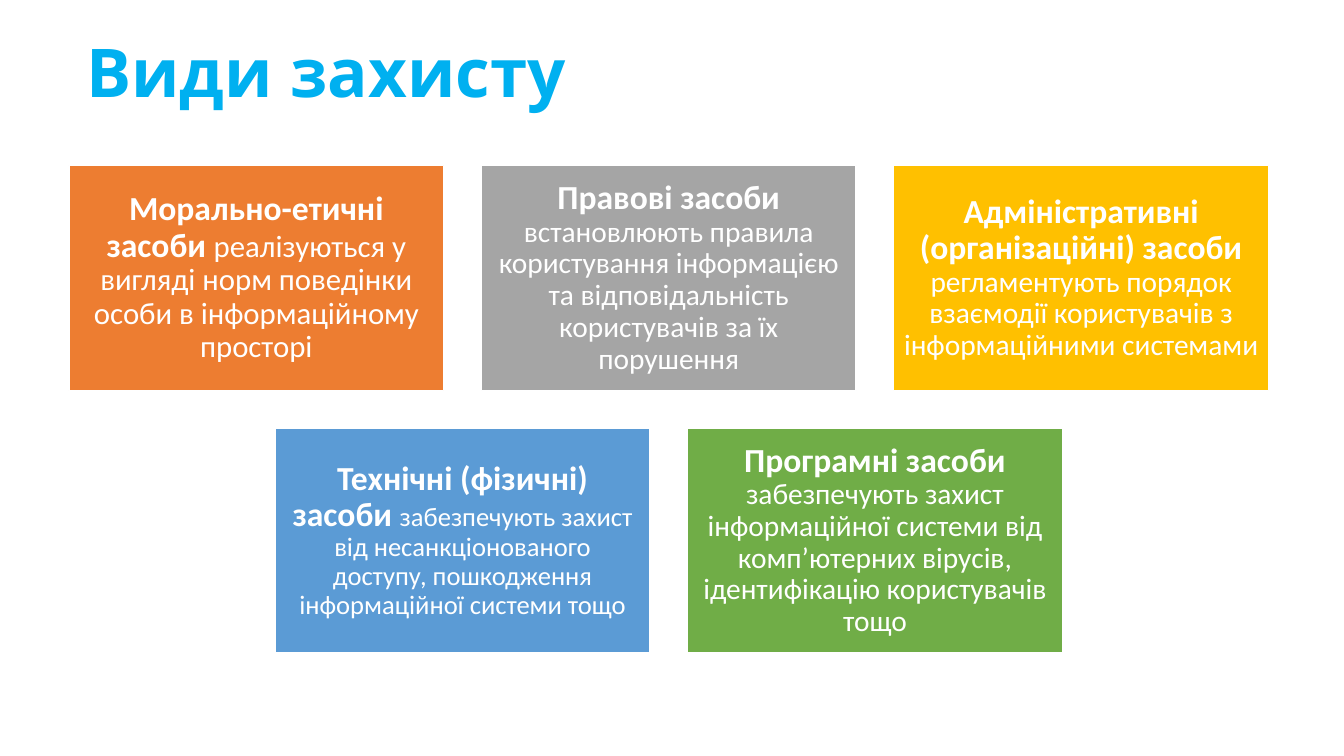
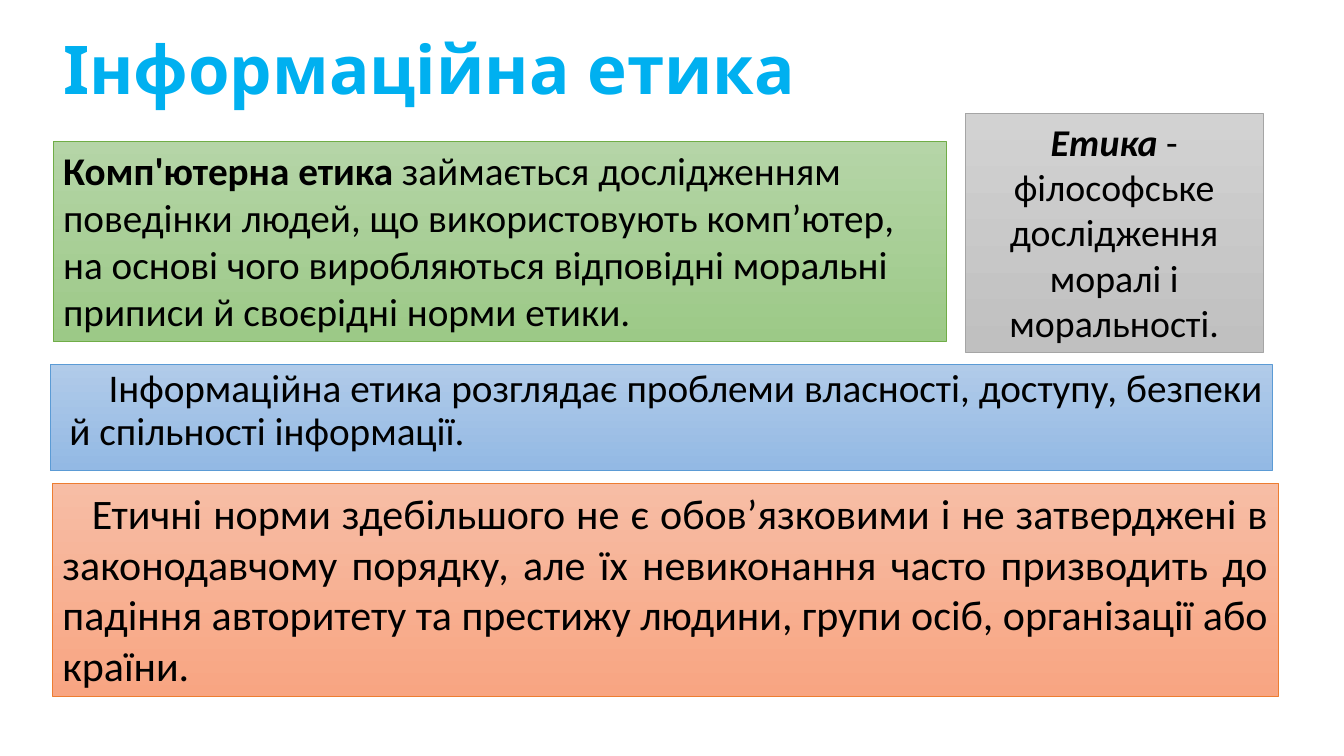
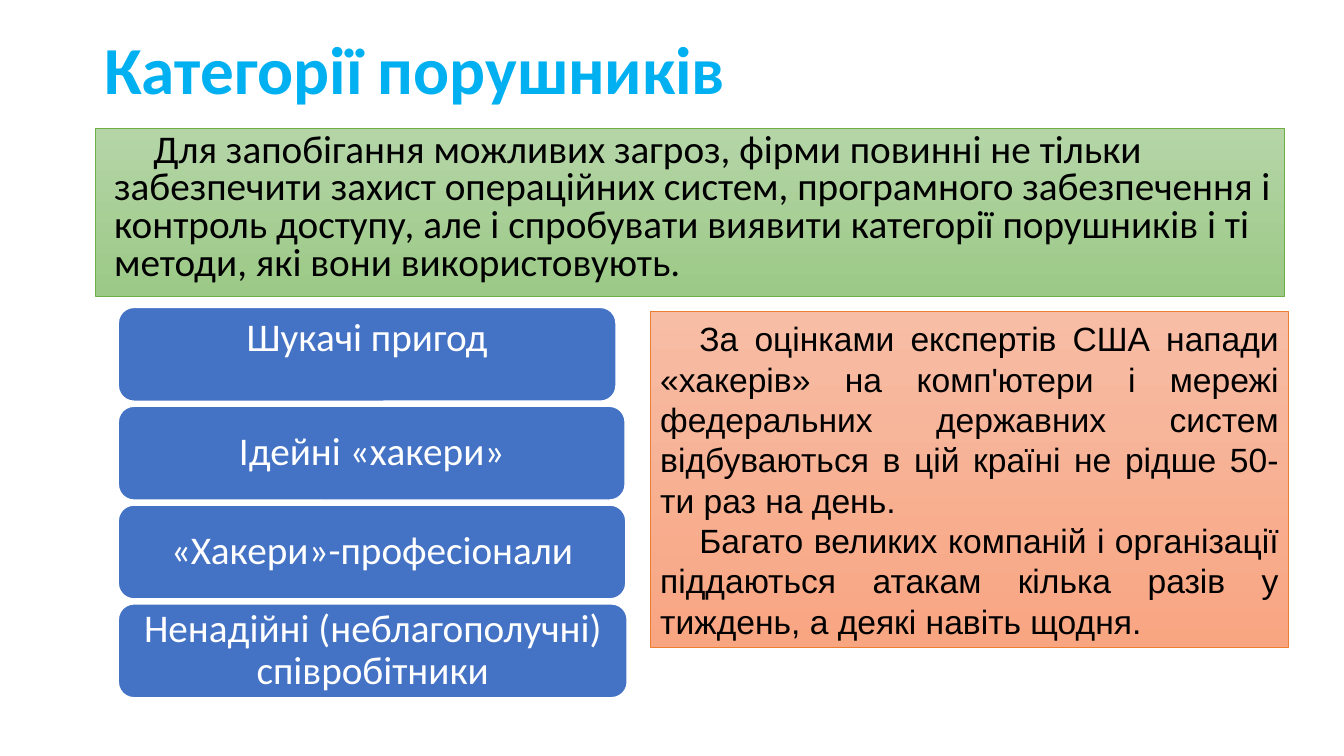
from dataclasses import dataclass

from pptx import Presentation
from pptx import util as u
from pptx.dml.color import RGBColor
from pptx.enum import shapes, text

Pt = u.Pt
SHAPE = shapes.MSO_SHAPE
ALIGN = text.PP_ALIGN
ANCHOR = text.MSO_ANCHOR

COLORS = {
    "title": "00B0F0", "white": "FFFFFF", "black": "000000",
    "orange": "ED7D31", "gray": "A5A5A5", "gold": "FFC000",
    "blue": "5B9BD5", "green": "70AD47", "bar": "4472C4",
}
GRADIENTS = {
    "orange": ("F7BDA5", "F8A582"),
    "gray": ("D2D2D2", "C0C0C0"),
    "blue": ("B1CBE9", "93B9E4"),
    "green": ("B5D5A7", "9CC987"),
}


@dataclass
class Run:
    text: str
    bold: bool = False
    italic: bool = False
    size: float | None = None


@dataclass
class Box:
    left: float
    top: float
    width: float
    height: float


@dataclass
class Tile:
    color: str
    term: str
    detail: str
    detail_size: float


@dataclass
class Bar:
    label: str
    width: float
    anchor: ANCHOR = ANCHOR.MIDDLE


def rgb(name: str) -> RGBColor:
    return RGBColor.from_string(COLORS[name])


def write(tf, *paragraphs: list[Run], size: float, font: str = "Calibri",
          color: str = "black", align: ALIGN = ALIGN.LEFT,
          anchor: ANCHOR = ANCHOR.TOP, spacing: float = 1.0,
          margin: float = 0, indent: float = 0,
          inset: tuple[float, float] = (7.2, 3.6)) -> None:
    """Fill a text frame; each paragraph is a list of runs."""
    tf.word_wrap = True
    tf.vertical_anchor = anchor
    tf.margin_left = tf.margin_right = Pt(inset[0])
    tf.margin_top = tf.margin_bottom = Pt(inset[1])
    for i, runs in enumerate(paragraphs):
        p = tf.add_paragraph() if i else tf.paragraphs[0]
        p.alignment = align
        p.line_spacing = spacing
        pPr = p._p.get_or_add_pPr()
        pPr.set("marL", str(Pt(margin)))
        pPr.set("indent", str(Pt(indent)))
        for run in runs:
            r = p.add_run()
            r.text = run.text
            r.font.name = font
            r.font.size = Pt(run.size or size)
            r.font.bold = run.bold
            r.font.italic = run.italic
            r.font.color.rgb = rgb(color)


def place(box: Box) -> tuple[u.Length, ...]:
    return Pt(box.left), Pt(box.top), Pt(box.width), Pt(box.height)


def add_block(s, box: Box, color: str, kind: SHAPE = SHAPE.RECTANGLE):
    """Solid shape with a thin white outline."""
    sp = s.shapes.add_shape(kind, *place(box))
    sp.shadow.inherit = False
    sp.fill.solid()
    sp.fill.fore_color.rgb = rgb(color)
    sp.line.color.rgb = rgb("white")
    sp.line.width = Pt(1)
    return sp


def add_panel(s, box: Box, color: str, *paragraphs: list[Run], **fmt) -> None:
    """Text panel with a vertical gradient and an outline of the same hue."""
    sp = add_block(s, box, color)
    sp.fill.gradient()
    sp.fill.gradient_angle = 270
    for stop, value in zip(sp.fill.gradient_stops, GRADIENTS[color]):
        stop.color.rgb = RGBColor.from_string(value)
    sp.line.color.rgb = rgb(color)
    sp.line.width = Pt(0.5)
    write(sp.text_frame, *paragraphs, **fmt)


def add_titled_slide(prs, title: str, left: float, top: float = 13,
                     font: str = "League Spartan"):
    s = prs.slides.add_slide(prs.slide_layouts[6])
    tb = s.shapes.add_textbox(*place(Box(left, top, 820, 78.5)))
    write(tb.text_frame, [Run(title, bold=True)], size=48, font=font,
          color="title", anchor=ANCHOR.MIDDLE, spacing=0.9)
    return s


TILES = [
    [
        Tile("orange", "Морально-етичні засоби ",
             "реалізуються у вигляді норм поведінки особи в інформаційному просторі", 22),
        Tile("gray", "Правові засоби ",
             "встановлюють правила користування інформацією та відповідальність "
             "користувачів за їх порушення", 21),
        Tile("gold", "Адміністративні (організаційні) засоби ",
             "регламентують порядок взаємодії користувачів з інформаційними системами", 21),
    ],
    [
        Tile("blue", "Технічні (фізичні) засоби ",
             "забезпечують захист від несанкціонованого доступу, пошкодження "
             "інформаційної системи тощо", 19),
        Tile("green", "Програмні засоби ",
             "забезпечують захист інформаційної системи від комп’ютерних вірусів, "
             "ідентифікацію користувачів тощо", 21),
    ],
]


def build_protection(prs) -> None:
    s = add_titled_slide(prs, "Види захисту", 54.5, 15)
    width, height, gap, center, top = 267.8, 160.7, 26.8, 477.7, 118.2
    for row, tiles in enumerate(TILES):
        left = center - (len(tiles) * (width + gap) - gap) / 2
        for col, tile in enumerate(tiles):
            box = Box(left + col * (width + gap), top + row * (height + gap), width, height)
            sp = add_block(s, box, tile.color)
            write(sp.text_frame,
                  [Run(tile.term, bold=True), Run(tile.detail, size=tile.detail_size)],
                  size=24, color="white", align=ALIGN.CENTER, anchor=ANCHOR.MIDDLE,
                  spacing=0.9, inset=(7.2, 7.2))


def build_ethics(prs) -> None:
    s = add_titled_slide(prs, "Інформаційна етика", 38)
    add_panel(s, Box(36, 260, 872.8, 76.2), "blue",
              [Run("Інформаційна етика розглядає проблеми власності, доступу, безпеки "
                   "й спільності інформації.")],
              size=28, align=ALIGN.JUSTIFY, spacing=0.9, margin=6.5, indent=28)
    add_panel(s, Box(37.5, 345, 876, 152.5), "orange",
              [Run("Етичні норми здебільшого не є обов’язковими і не затверджені в "
                   "законодавчому порядку, але їх невиконання часто призводить до "
                   "падіння авторитету та престижу людини, групи осіб, організації "
                   "або країни.")],
              size=30, align=ALIGN.JUSTIFY, indent=21)
    add_panel(s, Box(689.5, 81, 212.7, 170.5), "gray",
              [Run("Етика", bold=True, italic=True),
               Run(" - філософське дослідження моралі і моральності.")],
              size=27, align=ALIGN.CENTER)
    add_panel(s, Box(38, 101, 638, 143), "green",
              [Run("Комп'ютерна етика ", bold=True),
               Run("займається дослідженням поведінки людей, що використовують "
                   "комп’ютер, на основі чого виробляються відповідні моральні "
                   "приписи й своєрідні норми етики.")],
              size=28)


BARS = [
    Bar("Шукачі пригод", 355.5, ANCHOR.TOP),
    Bar("Ідейні «хакери»", 362),
    Bar("«Хакери»-професіонали", 362.5),
    Bar("Ненадійні (неблагополучні) співробітники", 363.5),
]


def build_offenders(prs) -> None:
    s = add_titled_slide(prs, "Категорії порушників", 67.5, font="Calibri")
    add_panel(s, Box(68, 91.5, 849.5, 120), "green",
              [Run("Для запобігання можливих загроз, фірми повинні не тільки "
                   "забезпечити захист операційних систем, програмного забезпечення і "
                   "контроль доступу, але і спробувати виявити категорії порушників і "
                   "ті методи, які вони використовують.")],
              size=28, spacing=0.8, margin=6.5, indent=28)
    for i, bar in enumerate(BARS):
        box = Box(84.5, 219.6 + i * 70.6, bar.width, 67)
        sp = add_block(s, box, "bar", SHAPE.ROUNDED_RECTANGLE)
        at_top = bar.anchor == ANCHOR.TOP
        write(sp.text_frame, [Run(bar.label)], size=28, color="white",
              align=ALIGN.CENTER, anchor=bar.anchor, spacing=1 if at_top else 0.9,
              inset=(8.6, 0 if at_top else 4.3))
    add_panel(s, Box(464.5, 222.5, 456, 240), "orange",
              [Run("За оцінками експертів США напади «хакерів» на комп'ютери і мережі "
                   "федеральних державних систем відбуваються в цій країні не рідше "
                   "50-ти раз на день.")],
              [Run("Багато великих компаній і організації піддаються атакам кілька "
                   "разів у тиждень, а деякі навіть щодня.")],
              size=24, font="Arial", align=ALIGN.JUSTIFY, anchor=ANCHOR.MIDDLE, indent=28)


def main() -> None:
    prs = Presentation()
    prs.slide_width, prs.slide_height = Pt(960), Pt(540)
    build_protection(prs)
    build_ethics(prs)
    build_offenders(prs)
    prs.save("out.pptx")


if __name__ == "__main__":
    main()
